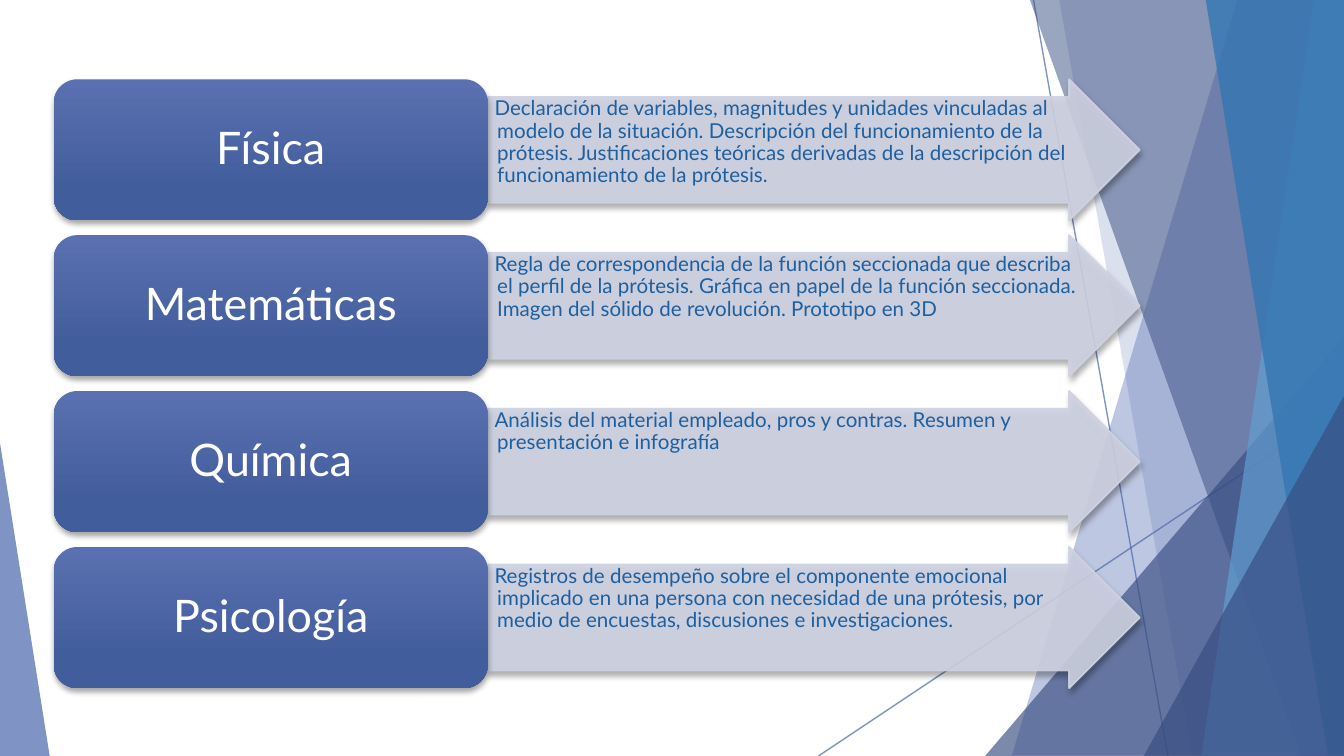
from dataclasses import dataclass

from pptx import Presentation
from pptx.dml.color import RGBColor
from pptx.dml.fill import FillFormat
from pptx.enum.shapes import MSO_CONNECTOR, MSO_SHAPE
from pptx.enum.text import MSO_ANCHOR, PP_ALIGN
from pptx.oxml.ns import qn
from pptx.shapes.autoshape import Shape
from pptx.slide import Slide
from pptx.util import Inches, Pt
from lxml import etree

STRAIGHT = MSO_CONNECTOR.STRAIGHT
ARROW, ROUNDED, TRIANGLE = MSO_SHAPE.RIGHT_ARROW, MSO_SHAPE.ROUNDED_RECTANGLE, MSO_SHAPE.ISOSCELES_TRIANGLE
TOP, MIDDLE = MSO_ANCHOR.TOP, MSO_ANCHOR.MIDDLE
LEFT, CENTER = PP_ALIGN.LEFT, PP_ALIGN.CENTER

INDIGO = RGBColor(0x4A, 0x66, 0xAC)
NAVY = RGBColor(0x37, 0x4C, 0x81)
SKY = RGBColor(0x62, 0x9D, 0xD1)
BLUE = RGBColor(0x34, 0x77, 0xB2)
PALE = RGBColor(0xCE, 0xD2, 0xE2)
GRADIENT_TOP = RGBColor(0x5A, 0x70, 0xB0)
GRADIENT_BOTTOM = RGBColor(0x42, 0x5D, 0x9C)
BODY_BLUE = RGBColor(0x1E, 0x5F, 0x9F)
WHITE = RGBColor(0xFF, 0xFF, 0xFF)

FONT = "Lato"
PAGE_WIDTH = 10
PAGE_HEIGHT = PAGE_WIDTH * 9 / 16
FACET_TOP = -0.01
LABEL_LEFT, LABEL_WIDTH = 0.4, 3.23
ARROW_LEFT, ARROW_WIDTH = LABEL_LEFT + LABEL_WIDTH, 4.85
TASKS_WIDTH, TASKS_HEIGHT = 4.45, 0.79
FIRST_TOP, ROW_HEIGHT, ROW_STEP = 0.59, 1.05, 1.16


@dataclass
class Facet:
    """Slanted band from its left edge to the right side of the page."""
    top_x: float
    bottom_x: float
    color: RGBColor
    opacity: int


@dataclass
class Wedge:
    """Right triangle standing on the bottom of the page."""
    left: float
    width: float
    height: float
    apex: float
    color: RGBColor
    opacity: int


@dataclass
class Subject:
    name: str
    tasks: str


@dataclass
class TextStyle:
    size: int
    color: RGBColor
    align: PP_ALIGN
    frame: dict


RAYS = [((7.69, 0), (8.69, PAGE_HEIGHT)), ((10, 3.02), (6.09, PAGE_HEIGHT))]

BACKDROP = [
    Facet(9.21, 7.53, INDIGO, 36),
    Facet(7.88, 8.87, INDIGO, 20),
    Wedge(7.33, 2.67, 3.12, 1, NAVY, 66),
    Facet(7.66, 9.68, NAVY, 50),
    Facet(9.78, 8.94, SKY, 70),
    Facet(8.97, 9.88, BLUE, 80),
    Wedge(8.51, 1.49, 2.68, 1, NAVY, 66),
    Wedge(0, 0.37, 2.33, 0, INDIGO, 70),
]

SUBJECTS = [
    Subject("Física", "Declaración de variables, magnitudes y unidades vinculadas al modelo de la "
            "situación. Descripción del funcionamiento de la prótesis. Justificaciones teóricas "
            "derivadas de la descripción del funcionamiento de la prótesis."),
    Subject("Matemáticas", "Regla de correspondencia de la función seccionada que describa el perfil "
            "de la prótesis. Gráfica en papel de la función seccionada. Imagen del sólido de "
            "revolución. Prototipo en 3D"),
    Subject("Química", "Análisis del material empleado, pros y contras. Resumen y presentación e "
            "infografía"),
    Subject("Psicología", "Registros de desempeño sobre el componente emocional implicado en una "
            "persona con necesidad de una prótesis, por medio de encuestas, discusiones e "
            "investigaciones."),
]

LABEL_STYLE = TextStyle(24, WHITE, CENTER, {
    "vertical_anchor": MIDDLE, "margin_left": Inches(0.1), "margin_right": Inches(0.1),
    "margin_top": Inches(0.05), "margin_bottom": Inches(0.05)})
TASKS_STYLE = TextStyle(11, BODY_BLUE, LEFT, {
    "vertical_anchor": TOP, "margin_left": Inches(0.01), "margin_right": Inches(0.01),
    "margin_top": Inches(0.01), "margin_bottom": Inches(0.01)})


def paint(fill: FillFormat, color: RGBColor, opacity: int) -> None:
    fill.solid()
    fill.fore_color.rgb = color
    tone = fill._xPr.find(qn("a:solidFill")).find(qn("a:srgbClr"))
    etree.SubElement(tone, qn("a:alpha"), val=str(opacity * 1000))


def add_soft_shadow(shape: Shape) -> None:
    shape.shadow.inherit = False
    effects = shape._element.spPr.find(qn("a:effectLst"))
    shadow = etree.SubElement(effects, qn("a:outerShdw"), blurRad=str(Pt(3)), dist=str(Pt(2)),
                              dir="5400000", rotWithShape="0")
    tone = etree.SubElement(shadow, qn("a:srgbClr"), val="000000")
    etree.SubElement(tone, qn("a:alpha"), val="35000")


def draw_ray(page: Slide, start: tuple, end: tuple) -> None:
    ray = page.shapes.add_connector(STRAIGHT, *map(Inches, start + end))
    ray.line.width = Pt(0.75)
    paint(ray.line.fill, INDIGO, 70)
    etree.SubElement(ray._element.spPr, qn("a:effectLst"))


def draw_backdrop_part(page: Slide, part: Facet | Wedge) -> None:
    if isinstance(part, Facet):
        # Outline points are whole hundredths of an inch
        corners = [(part.top_x, FACET_TOP), (PAGE_WIDTH, FACET_TOP),
                   (PAGE_WIDTH, PAGE_HEIGHT), (part.bottom_x, PAGE_HEIGHT)]
        first, *others = [(round(x * 100), round(y * 100)) for x, y in corners]
        builder = page.shapes.build_freeform(*first, scale=Inches(0.01))
        builder.add_line_segments(others)
        shape = builder.convert_to_shape()
    else:
        shape = page.shapes.add_shape(TRIANGLE, Inches(part.left), Inches(PAGE_HEIGHT - part.height),
                                      Inches(part.width), Inches(part.height))
        shape.adjustments[0] = part.apex
    shape.shadow.inherit = False
    shape.line.fill.background()
    paint(shape.fill, part.color, part.opacity)


def write_text(shape: Shape, text: str, style: TextStyle) -> None:
    frame = shape.text_frame
    frame.word_wrap = True
    for name, value in style.frame.items():
        setattr(frame, name, value)
    para = frame.paragraphs[0]
    para.alignment, para.line_spacing = style.align, 0.9
    span = para.add_run()
    span.text = text
    span.font.name, span.font.size = FONT, Pt(style.size)
    span.font.color.rgb = style.color


def draw_subject(page: Slide, subject: Subject, top: float) -> None:
    # Arrow behind the tasks
    arrow = page.shapes.add_shape(ARROW, Inches(ARROW_LEFT), Inches(top),
                                  Inches(ARROW_WIDTH), Inches(ROW_HEIGHT))
    arrow.adjustments[0] = 0.75
    paint(arrow.fill, PALE, 90)
    arrow.line.width = Pt(1)
    paint(arrow.line.fill, PALE, 90)
    add_soft_shadow(arrow)

    # Tasks, with a slightly hanging first line
    box = page.shapes.add_textbox(Inches(ARROW_LEFT), Inches(top + (ROW_HEIGHT - TASKS_HEIGHT) / 2),
                                  Inches(TASKS_WIDTH), Inches(TASKS_HEIGHT))
    write_text(box, subject.tasks, TASKS_STYLE)
    hanging = box.text_frame.paragraphs[0]._p.get_or_add_pPr()
    hanging.set("marL", str(Inches(0.06)))
    hanging.set("indent", str(Inches(-0.02)))

    # Label with the subject name
    label = page.shapes.add_shape(ROUNDED, Inches(LABEL_LEFT), Inches(top),
                                  Inches(LABEL_WIDTH), Inches(ROW_HEIGHT))
    label.line.fill.background()
    label.fill.gradient()
    label.fill.gradient_angle = 270
    for stop, position, color in zip(label.fill.gradient_stops, (0, 0.78),
                                     (GRADIENT_TOP, GRADIENT_BOTTOM)):
        stop.position, stop.color.rgb = position, color
    add_soft_shadow(label)
    write_text(label, subject.name, LABEL_STYLE)


def main() -> None:
    deck = Presentation()
    deck.slide_width, deck.slide_height = Inches(PAGE_WIDTH), Inches(PAGE_HEIGHT)
    page = deck.slides.add_slide(deck.slide_layouts[6])
    for start, end in RAYS:
        draw_ray(page, start, end)
    for part in BACKDROP:
        draw_backdrop_part(page, part)
    for row, subject in enumerate(SUBJECTS):
        draw_subject(page, subject, FIRST_TOP + row * ROW_STEP)
    deck.save("out.pptx")


if __name__ == "__main__":
    main()
